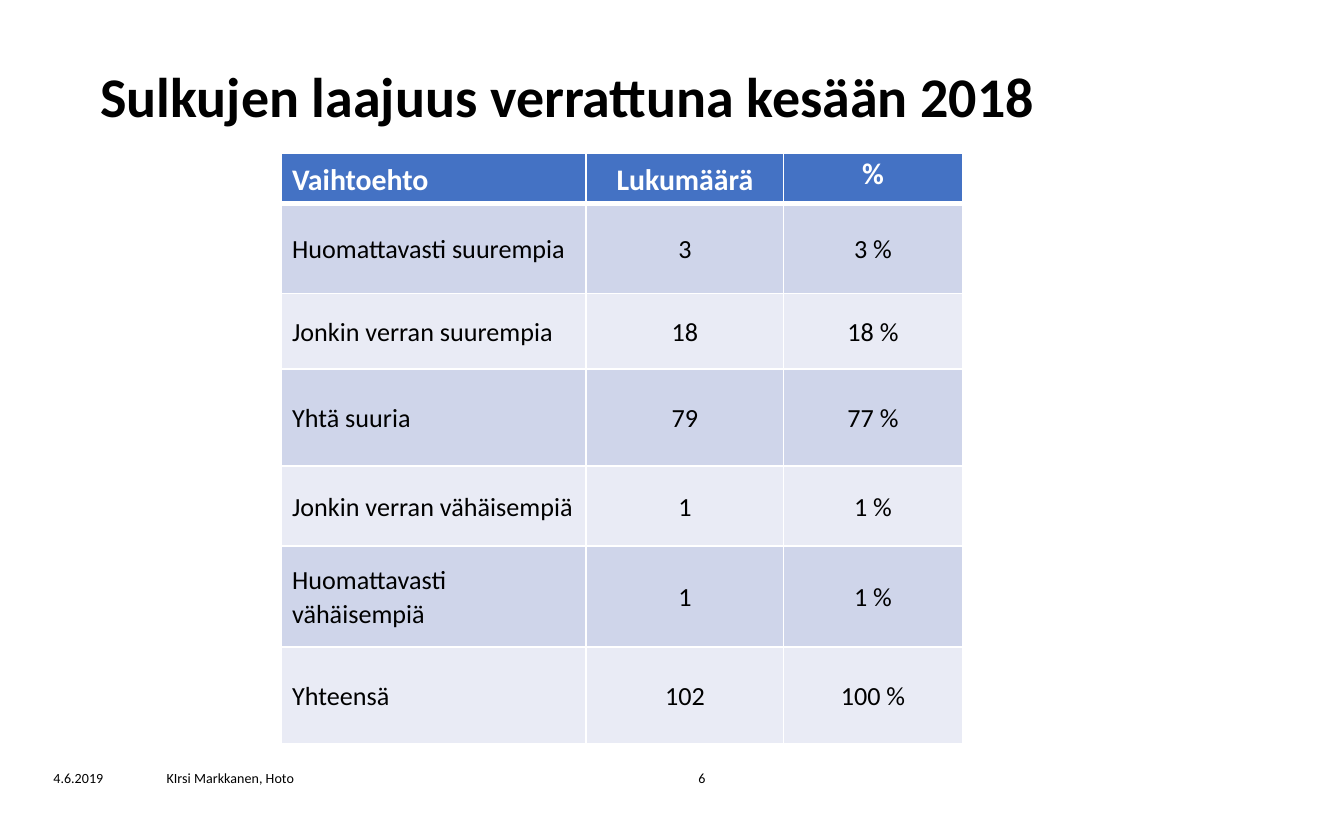
from typing import NamedTuple

import pptx
import pptx.dml.color
import pptx.enum.text
import pptx.oxml
import pptx.oxml.ns
import pptx.util
from pptx.util import Cm

FONT = "Calibri"
BLACK, WHITE, BLUE = "000000", "FFFFFF", "4472C4"
BANDS = ("CFD5EA", "E9EBF5")
LEFT, CENTER = pptx.enum.text.PP_ALIGN.LEFT, pptx.enum.text.PP_ALIGN.CENTER
TOP, MIDDLE = pptx.enum.text.MSO_ANCHOR.TOP, pptx.enum.text.MSO_ANCHOR.MIDDLE


class Label(NamedTuple):
    text: str
    left: float
    top: float
    width: float
    height: float
    size: float = 7.5
    bold: bool = False
    anchor: pptx.enum.text.MSO_ANCHOR = TOP
    inset: float = 0.25
    spacing: float = 1.0


class Row(NamedTuple):
    height: float
    cells: tuple[str, str, str]


LABELS = [
    Label("Sulkujen laajuus verrattuna kesään 2018", 1.9, 0.84, 21.9, 2.06,
          size=30, bold=True, anchor=MIDDLE, inset=0, spacing=0.9),
    Label("4.6.2019", 0.76, 14.43, 2.03, 0.84),
    Label("KIrsi Markkanen, Hoto", 2.9, 14.43, 9.96, 0.84),
    Label("6", 12.95, 14.43, 1.27, 0.84),
]

COLUMNS = (5.77, 3.73, 3.38)
ROWS = [
    Row(0.93, ("Vaihtoehto", "Lukumäärä", "%")),
    Row(1.7, ("Huomattavasti suurempia", "3", "3 %")),
    Row(1.43, ("Jonkin verran suurempia", "18", "18 %")),
    Row(1.83, ("Yhtä suuria", "79", "77 %")),
    Row(1.52, ("Jonkin verran vähäisempiä", "1", "1 %")),
    Row(1.91, ("Huomattavasti vähäisempiä", "1", "1 %")),
    Row(1.83, ("Yhteensä", "102", "100 %")),
]


def rgb(value: str) -> pptx.dml.color.RGBColor:
    return pptx.dml.color.RGBColor.from_string(value)


def write(tf, text: str, *, size: float, color: str = BLACK, bold: bool = False,
          align=LEFT, spacing: float = 1.0, after: float = 0) -> None:
    p = tf.paragraphs[0]
    p.alignment, p.line_spacing = align, spacing
    p.space_after = pptx.util.Pt(after)
    r = p.add_run()
    r.text = text
    r.font.name, r.font.size, r.font.bold = FONT, pptx.util.Pt(size), bold
    r.font.color.rgb = rgb(color)


def draw_label(s, label: Label) -> None:
    sp = s.shapes.add_textbox(Cm(label.left), Cm(label.top), Cm(label.width), Cm(label.height))
    tf = sp.text_frame
    tf.word_wrap = True
    tf.vertical_anchor = label.anchor
    tf.margin_left = Cm(label.inset)
    write(tf, label.text, size=label.size, bold=label.bold, spacing=label.spacing)


def set_borders(cell, top: int, bottom: int) -> None:
    tc_pr = cell._tc.get_or_add_tcPr()
    for i, (side, width) in enumerate(zip("LRTB", (1, 1, top, bottom))):
        tc_pr.insert(i, pptx.oxml.parse_xml(
            f'<a:ln{side} {pptx.oxml.ns.nsdecls("a")} w="{pptx.util.Pt(width)}">'
            f'<a:solidFill><a:srgbClr val="{WHITE}"/></a:solidFill></a:ln{side}>'))


def draw_cell(cell, text: str, row: int, col: int) -> None:
    header = row == 0
    cell.fill.solid()
    cell.fill.fore_color.rgb = rgb(BLUE if header else BANDS[(row - 1) % 2])
    set_borders(cell, top=3 if row == 1 else 1, bottom=3 if header else 1)
    cell.vertical_anchor = TOP if header else MIDDLE
    # The percent heading sits flush with the top of its cell
    flush = header and col == 2
    cell.margin_left = cell.margin_right = Cm(0 if flush else 0.21)
    cell.margin_top = cell.margin_bottom = Cm(0 if flush else 0.11)
    write(cell.text_frame, text, size=16 if header else 14, bold=header,
          color=WHITE if header else BLACK, align=CENTER if col else LEFT,
          spacing=1.07, after=8)


def draw_table(s, left: float, top: float) -> None:
    frame = s.shapes.add_table(len(ROWS), len(COLUMNS), Cm(left), Cm(top),
                               Cm(sum(COLUMNS)), Cm(sum(row.height for row in ROWS)))
    table = frame.table
    for column, width in zip(table.columns, COLUMNS):
        column.width = Cm(width)
    for i, row in enumerate(ROWS):
        table.rows[i].height = Cm(row.height)
        for j, text in enumerate(row.cells):
            draw_cell(table.cell(i, j), text, i, j)


def main() -> None:
    prs = pptx.Presentation()
    prs.slide_width, prs.slide_height = Cm(25.4), Cm(15.88)
    s = prs.slides.add_slide(prs.slide_layouts[6])

    # Title and footer
    for label in LABELS:
        draw_label(s, label)

    # Answers compared with summer 2018
    draw_table(s, 5.31, 2.9)

    prs.save("out.pptx")


if __name__ == "__main__":
    main()
